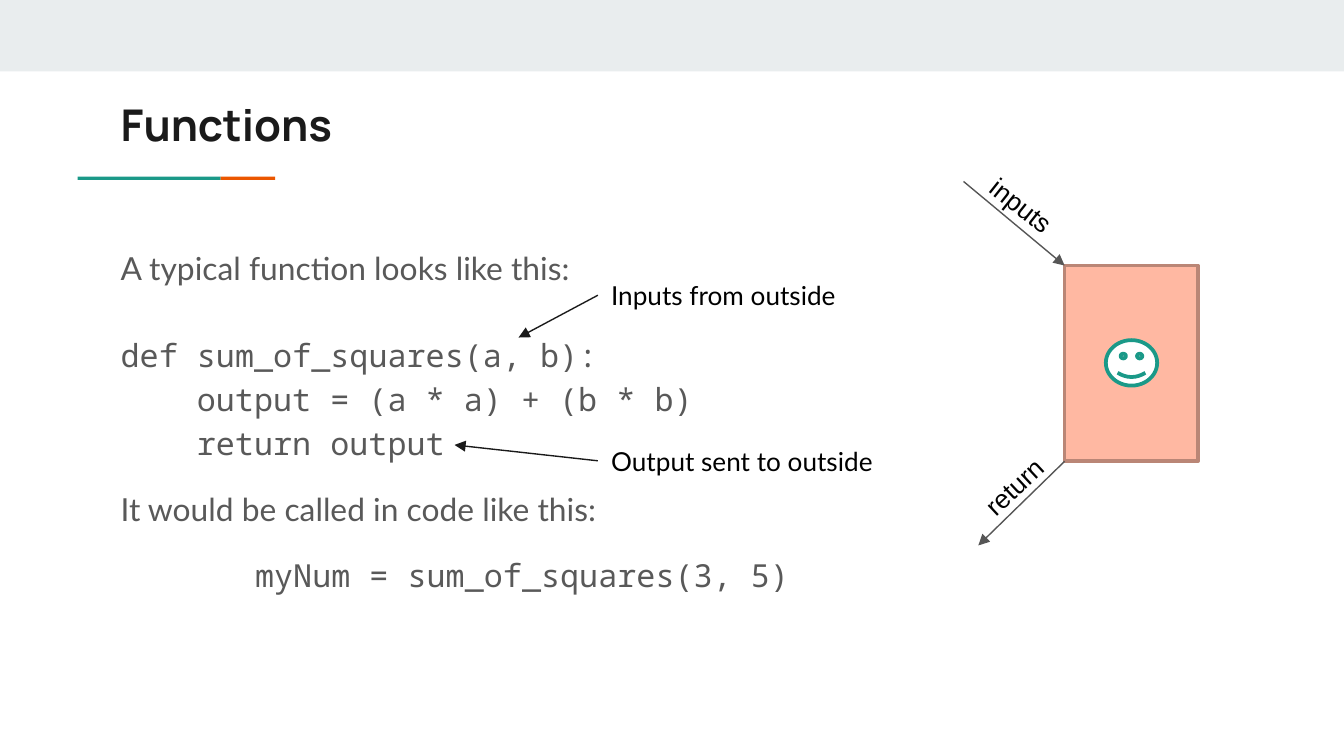
import pptx
import pptx.util
import pptx.dml.color
import pptx.enum.shapes
import pptx.enum.text
import pptx.oxml
import pptx.oxml.ns

Cm = pptx.util.Cm
Pt = pptx.util.Pt
SHAPE = pptx.enum.shapes.MSO_SHAPE
ALIGN = pptx.enum.text.PP_ALIGN
COLORS = {
    "band": "E9EDEE", "teal": "1A9988", "orange": "EB5600", "title": "1A1A1A",
    "body": "595959", "black": "000000", "white": "FFFFFF", "box": "FFB8A2",
    "box_line": "BA8676", "arrow": "565656",
}


def color(name):
    return pptx.dml.color.RGBColor.from_string(COLORS[name])


def style_text(frame, para, font, size, name, inset=0.25):
    frame.margin_left = frame.margin_right = Cm(0.25)
    frame.margin_top = frame.margin_bottom = Cm(inset)
    frame.vertical_anchor = pptx.enum.text.MSO_ANCHOR.TOP
    para.font.name, para.font.size = font, Pt(size)
    para.font.color.rgb = color(name)


deck = pptx.Presentation()
deck.slide_width, deck.slide_height = Cm(25.4), Cm(14.29)
page = deck.slides.add_slide(deck.slide_layouts[1])

# Top band and two-colour rule under the title
for name, left, top, width, height in [
    ("band", 0, 0, 25.4, 1.35),
    ("teal", 1.47, 3.34, 2.7, 0.06),
    ("orange", 4.17, 3.34, 1.03, 0.06),
]:
    bar = page.shapes.add_shape(SHAPE.RECTANGLE, Cm(left), Cm(top), Cm(width), Cm(height))
    bar.shadow.inherit = False
    bar.fill.solid()
    bar.fill.fore_color.rgb = color(name)
    bar.line.fill.background()

# Title
title = page.shapes.title
title.left, title.top, title.width, title.height = Cm(2.03), Cm(1.6), Cm(21.36), Cm(1.5)
title.text_frame.text = "Functions"
title.text_frame.auto_size = pptx.enum.text.MSO_AUTO_SIZE.NONE
para = title.text_frame.paragraphs[0]
para.alignment = ALIGN.LEFT
para.font.bold = True
style_text(title.text_frame, para, "Manrope", 23.4, "title")

# Explanation and code: text, font, space before (pt), indent (cm)
body = page.placeholders[1]
body.left, body.top, body.width, body.height = Cm(2.03), Cm(4.34), Cm(21.62), Cm(7.72)
frame = body.text_frame
frame.auto_size = pptx.enum.text.MSO_AUTO_SIZE.NONE
lines = [
    ("A typical function looks like this:", "Lato", 0, 0),
    ("def sum_of_squares(a, b):", "Noto Sans Mono", 23.5, 0),
    ("output = (a * a) + (b * b)", "Noto Sans Mono", 0, 1.44),
    ("return output", "Noto Sans Mono", 0, 1.44),
    ("It would be called in code like this:", "Lato", 12, 0),
    ("myNum = sum_of_squares(3, 5)", "Noto Sans Mono", 12, 2.54),
]
frame.text = "\n".join(line[0] for line in lines)
for para, (text, font, before, indent) in zip(frame.paragraphs, lines):
    style_text(frame, para, font, 17, "body")
    para.line_spacing = 1.15
    para.space_before, para.space_after = Pt(before), Pt(0)
    props = para._p.get_or_add_pPr()
    props.set("marL", str(Cm(indent)))
    props.set("indent", "0")
    props.append(pptx.oxml.parse_xml(f'<a:buNone {pptx.oxml.ns.nsdecls("a")}/>'))
    # The bullet setting has to come before the default run properties
    props.append(props.find(pptx.oxml.ns.qn("a:defRPr")))

# Labels: text, left, top, width, height, rotation, font, top inset
labels = {}
for text, left, top, width, height, angle, font, inset in [
    ("Inputs from outside", 11.3, 5.03, 5.79, 1.1, 0, "Lato", 0.25),
    ("Output sent to outside", 11.3, 8.16, 5.79, 1.1, 0, "Lato", 0.25),
    ("return", 18.26, 8.76, 1.8, 0.86, 316.9, "Arial", 0.13),
    ("inputs", 18.39, 3.45, 1.83, 0.86, 38.4, "Arial", 0.13),
]:
    box = page.shapes.add_textbox(Cm(left), Cm(top), Cm(width), Cm(height))
    box.rotation = angle
    box.text_frame.text = text
    box.text_frame.word_wrap = angle == 0
    para = box.text_frame.paragraphs[0]
    para.alignment = ALIGN.CENTER if angle else ALIGN.LEFT
    style_text(box.text_frame, para, font, 14, "black", inset)
    labels[text] = box

# Function box with a face inside
for kind, left, top, width, height, fill, line in [
    (SHAPE.RECTANGLE, 20.12, 5.02, 2.52, 3.7, "box", "box_line"),
    (SHAPE.SMILEY_FACE, 20.9, 6.43, 0.97, 0.86, "white", "teal"),
]:
    shape = page.shapes.add_shape(kind, Cm(left), Cm(top), Cm(width), Cm(height))
    shape.shadow.inherit = False
    shape.fill.solid()
    shape.fill.fore_color.rgb = color(fill)
    shape.line.color.rgb = color(line)
    shape.line.width = Pt(2)
shape.adjustments[0] = 0.047

# Arrows: start, end, colour, label they start from
for x1, y1, x2, y2, name, label in [
    (11.3, 5.58, 9.8, 6.38, "title", "Inputs from outside"),
    (11.3, 8.71, 8.59, 8.41, "title", "Output sent to outside"),
    (18.21, 3.43, 20.12, 5.02, "arrow", None),
    (20.12, 8.72, 18.49, 10.31, "arrow", None),
]:
    arrow = page.shapes.add_connector(
        pptx.enum.shapes.MSO_CONNECTOR.STRAIGHT, Cm(x1), Cm(y1), Cm(x2), Cm(y2))
    if label:
        arrow.begin_connect(labels[label], 1)
    arrow.line.color.rgb = color(name)
    arrow.line.width = Pt(0.75)
    for parent, tag in [
        (arrow.line._get_or_add_ln(), 'tailEnd type="triangle"'),
        (arrow._element.spPr, "effectLst"),
    ]:
        parent.append(pptx.oxml.parse_xml(f'<a:{tag} {pptx.oxml.ns.nsdecls("a")}/>'))

deck.save("out.pptx")
